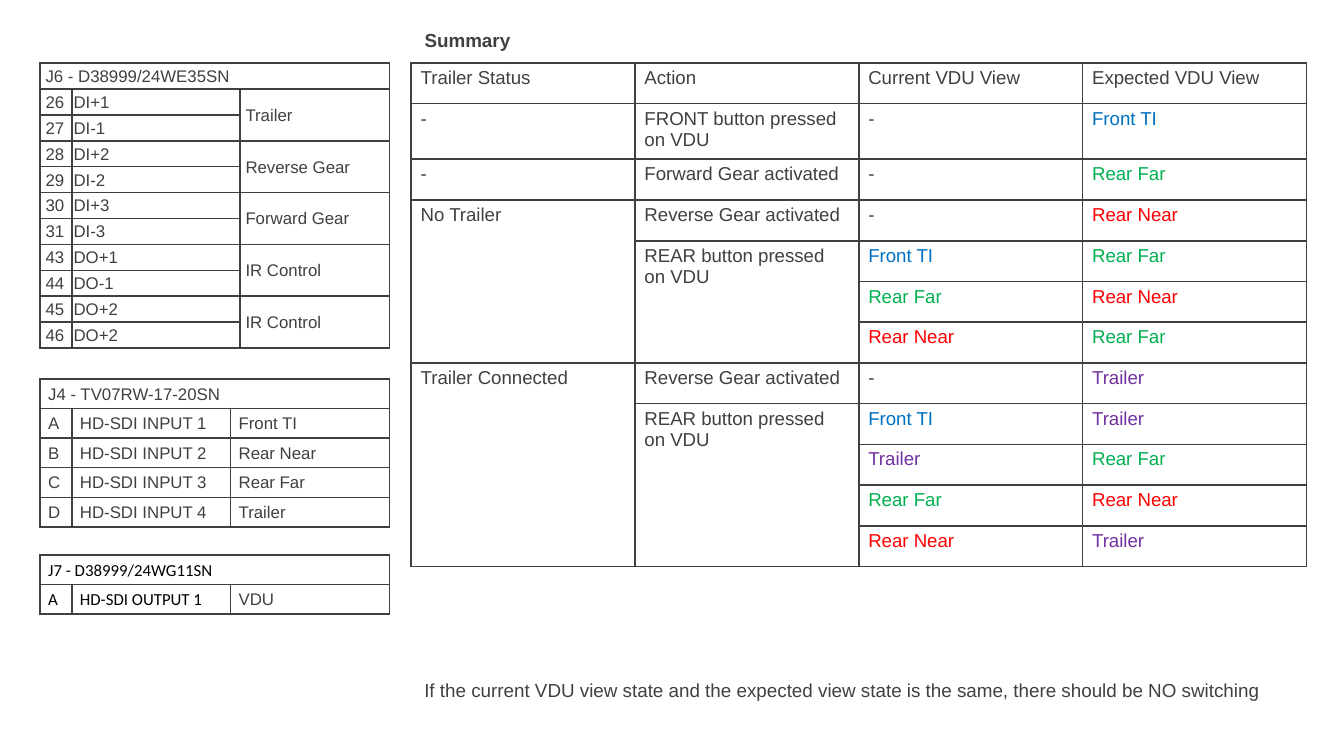
from dataclasses import dataclass

from lxml import etree
from pptx import Presentation
from pptx.dml.color import RGBColor
from pptx.enum import text
from pptx.oxml import ns
from pptx.util import Cm, Pt

COLORS = {"text": "404040", "black": "000000", "line": "404040"}
VIEW_COLORS = {
    "Front TI": "0070C0",
    "Rear Far": "00B050",
    "Rear Near": "FF0000",
    "Trailer": "7030A0",
}
ARIAL = ("Arial", COLORS["text"])
CALIBRI = ("Calibri", COLORS["black"])
TOP, MIDDLE = text.MSO_ANCHOR.TOP, text.MSO_ANCHOR.MIDDLE


@dataclass
class Grid:
    left: float
    top: float
    cols: list[float]
    rows: list[float]
    cells: list[list[str]]
    merges: list[tuple[int, int, int, int]]
    pads: list[float]
    styles: list[tuple[str, str]]
    pad_y: float = 0
    size: float = 9
    spacing: float = 1.07
    anchor: text.MSO_ANCHOR = MIDDLE
    view_colors: bool = False


def add_run(p, words: str, size: float, font: str, color: str, bold: bool = False) -> None:
    r = p.add_run()
    r.text = words
    r.font.size = Pt(size)
    r.font.name = font
    r.font.bold = bold
    r.font.color.rgb = RGBColor.from_string(color)


def add_borders(cell) -> None:
    tc_pr = cell._tc.get_or_add_tcPr()
    for i, side in enumerate(("a:lnL", "a:lnR", "a:lnT", "a:lnB")):
        ln = etree.Element(ns.qn(side), w=str(Pt(1)))
        fill = etree.SubElement(ln, ns.qn("a:solidFill"))
        etree.SubElement(fill, ns.qn("a:srgbClr"), val=COLORS["line"])
        tc_pr.insert(i, ln)


def draw_grid(s, grid: Grid) -> None:
    table = s.shapes.add_table(
        len(grid.rows), len(grid.cols), Cm(grid.left), Cm(grid.top),
        Cm(sum(grid.cols)), Cm(sum(grid.rows))).table
    table.first_row = table.horz_banding = False
    for col, width in zip(table.columns, grid.cols):
        col.width = Cm(width)
    for row, height in zip(table.rows, grid.rows):
        row.height = Cm(height)
    for i, line in enumerate(grid.cells):
        for j, words in enumerate(line):
            cell = table.cell(i, j)
            cell.margin_left = cell.margin_right = Cm(grid.pads[j])
            cell.margin_top = cell.margin_bottom = Cm(grid.pad_y)
            cell.vertical_anchor = grid.anchor
            cell.fill.background()
            add_borders(cell)
            if words:
                p = cell.text_frame.paragraphs[0]
                p.line_spacing = grid.spacing
                font, color = grid.styles[j]
                if grid.view_colors:
                    color = VIEW_COLORS.get(words, color)
                add_run(p, words, grid.size, font, color)
    for r1, c1, r2, c2 in grid.merges:
        table.cell(r1, c1).merge(table.cell(r2, c2))


def set_caption(sp, top: float, words: str, bold: bool = False) -> None:
    sp.left, sp.top, sp.width, sp.height = Cm(7.77), Cm(top), Cm(16.93), Cm(0.69)
    tf = sp.text_frame
    tf.word_wrap = True
    tf.auto_size = text.MSO_AUTO_SIZE.SHAPE_TO_FIT_TEXT
    tf.vertical_anchor = TOP
    p = tf.paragraphs[0]
    p.alignment = text.PP_ALIGN.LEFT
    add_run(p, words, 10.1, *ARIAL, bold)


def connector_grid(top: float, cells: list[list[str]], styles: list[tuple[str, str]]) -> Grid:
    return Grid(0.76, top, [0.6, 3, 3], [0.56] * len(cells), cells,
                [(0, 0, 0, 2)], [0.15] * 3, styles)


SUMMARY = Grid(
    7.77, 1.19, [4.23] * 4, [0.77, 1.05] + [0.77] * 10,
    [
        ["Trailer Status", "Action", "Current VDU View", "Expected VDU View"],
        ["-", "FRONT button pressed on VDU", "-", "Front TI"],
        ["-", "Forward Gear activated", "-", "Rear Far"],
        ["No Trailer", "Reverse Gear activated", "-", "Rear Near"],
        ["", "REAR button pressed on VDU", "Front TI", "Rear Far"],
        ["", "", "Rear Far", "Rear Near"],
        ["", "", "Rear Near", "Rear Far"],
        ["Trailer Connected", "Reverse Gear activated", "-", "Trailer"],
        ["", "REAR button pressed on VDU", "Front TI", "Trailer"],
        ["", "", "Trailer", "Rear Far"],
        ["", "", "Rear Far", "Rear Near"],
        ["", "", "Rear Near", "Trailer"],
    ],
    [(3, 0, 6, 0), (4, 1, 6, 1), (7, 0, 11, 0), (8, 1, 11, 1)],
    [0.18] * 4, [ARIAL] * 4, pad_y=0.09, size=10, spacing=1, anchor=TOP,
    view_colors=True)

J6 = Grid(
    0.76, 1.19, [0.6, 3.18, 2.82], [0.49] * 11,
    [
        ["J6 - D38999/24WE35SN", "", ""],
        ["26", "DI+1", "Trailer"],
        ["27", "DI-1", ""],
        ["28", "DI+2", "Reverse Gear"],
        ["29", "DI-2", ""],
        ["30", "DI+3", "Forward Gear"],
        ["31", "DI-3", ""],
        ["43", "DO+1", "IR Control"],
        ["44", "DO-1", ""],
        ["45", "DO+2", "IR Control"],
        ["46", "DO+2", ""],
    ],
    [(0, 0, 0, 2)] + [(i, 2, i + 1, 2) for i in range(1, 11, 2)],
    [0.1, 0.03, 0.1], [ARIAL] * 3)

J4 = connector_grid(7.16, [
    ["J4 - TV07RW-17-20SN", "", ""],
    ["A", "HD-SDI INPUT 1", "Front TI"],
    ["B", "HD-SDI INPUT 2", "Rear Near"],
    ["C", "HD-SDI INPUT 3", "Rear Far"],
    ["D", "HD-SDI INPUT 4", "Trailer"],
], [ARIAL] * 3)

J7 = connector_grid(10.49, [
    ["J7 - D38999/24WG11SN", "", ""],
    ["A", "HD-SDI OUTPUT 1", "VDU"],
], [CALIBRI, CALIBRI, ARIAL])


def main() -> None:
    prs = Presentation()
    prs.slide_width, prs.slide_height = Cm(25.4), Cm(14.29)
    s = prs.slides.add_slide(prs.slide_layouts[5])
    set_caption(s.shapes.title, 0.41, "Summary", bold=True)
    for grid in (SUMMARY, J6, J4, J7):
        draw_grid(s, grid)
    note = s.shapes.add_textbox(0, 0, 0, 0)
    set_caption(note, 12.7, "If the current VDU view state and the expected view state "
                "is the same, there should be NO switching")
    prs.save("out.pptx")


if __name__ == "__main__":
    main()
